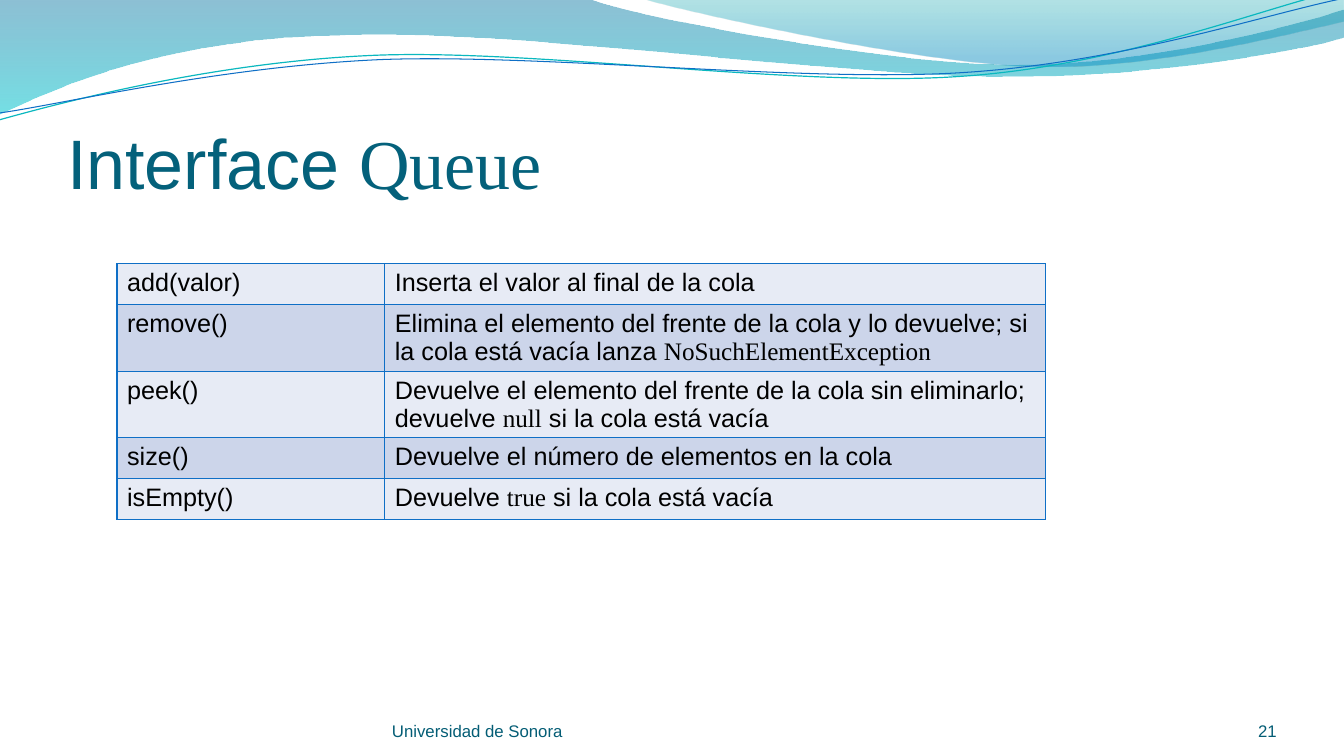
import math
from dataclasses import dataclass
from lxml import etree
from pptx import Presentation
from pptx.dml.color import RGBColor
from pptx.enum.text import MSO_ANCHOR, PP_ALIGN
from pptx.oxml.ns import qn
from pptx.util import Pt

BOTTOM, LEFT, RIGHT = MSO_ANCHOR.BOTTOM, PP_ALIGN.LEFT, PP_ALIGN.RIGHT
SANS, SERIF = "Arial", "Times New Roman"
BLACK, TITLE, FOOTER, BORDER = "000000", "04617B", "045D75", "0F6FC6"
BANDS = ("E7EBF5", "CCD5EA")
TILT, PIVOT = -2.7, (479, 42)


@dataclass
class Stop:
    position: float
    color: str
    alpha: int


@dataclass
class Wave:
    start: tuple
    segments: list
    stops: tuple = ()
    line: str = ""
    width: float = 0


@dataclass
class Label:
    box: tuple
    runs: list
    size: float
    color: str
    align: int = LEFT
    top_inset: float = 0


WAVES = [
    Wave((0, 0), [
        (422.6, -0.4),
        (456.5, 12.7, 637.2, 45.9, 727.9, 45.9),
        (819.4, 45.9, 920.2, 19.2, 959.8, 6.8),
        (961.2, 26.3),
        (943.9, 32.1, 835.2, 55.1, 715.7, 54.5),
        (596.9, 54.5, 366.5, 20.7, 247, 24.9),
        (123.8, 26.3, 43.9, 60.2, -0.7, 81.6),
    ], stops=(Stop(0, "0074A1", 45), Stop(1, "00C6CF", 55))),
    Wave((460.1, -0.4), [
        (488.9, 8.3, 654.5, 45, 738, 47.2),
        (821.5, 50, 923, 23.3, 959.8, 15.4),
        (959.8, 0),
    ], stops=(Stop(0, "00A1A9", 30), Stop(0.8, "008BBF", 45))),
    Wave((-0.7, 85.7), [
        (46.1, 72.7, 151.9, 44.6, 265.7, 39.6),
        (379.4, 34.6, 568.8, 62.6, 684, 54.7),
        (799.2, 47.5, 901.4, 5.8, 958.3, -7.2),
    ], line="0AB8BF", width=0.85),
    Wave((0, 80.6), [
        (45.4, 74.2, 157, 47.5, 272.2, 42.5),
        (386.6, 38.2, 573.1, 59, 687.6, 51.8),
        (802.8, 44.6, 903.6, 10.1, 960.5, -1.4),
    ], line="0F6FC6", width=0.75),
]

LABELS = [
    Label((48, 55.4, 864, 90), [("Interface ", SANS), ("Queue", SERIF)],
          50, TITLE, top_inset=3.6),
    Label((280, 500.4, 352, 28.8), [("Universidad de Sonora", SANS)], 12, FOOTER),
    Label((832, 500.4, 80, 28.8), [("21", SANS)], 12, FOOTER, RIGHT),
]

METHODS = [
    ("add(valor)", [("Inserta el valor al final de la cola", SANS)]),
    ("remove()", [
        ("Elimina el elemento del frente de la cola y lo devuelve; "
         "si la cola está vacía lanza ", SANS),
        ("NoSuchElementException", SERIF)]),
    ("peek()", [
        ("Devuelve el elemento del frente de la cola sin eliminarlo; devuelve ", SANS),
        ("null", SERIF), (" si la cola está vacía", SANS)]),
    ("size()", [("Devuelve el número de elementos en la cola", SANS)]),
    ("isEmpty()", [("Devuelve ", SANS), ("true", SERIF),
                   (" si la cola está vacía", SANS)]),
]


def rgb(value: str) -> RGBColor:
    return RGBColor.from_string(value)


def add_text(p, text: str, *, font: str, size: float, color: str) -> None:
    r = p.add_run()
    r.text = text
    r.font.name = font
    r.font.size = Pt(size)
    r.font.color.rgb = rgb(color)


def level(point: tuple) -> tuple:
    angle = math.radians(-TILT)
    dx, dy = point[0] - PIVOT[0], point[1] - PIVOT[1]
    return (PIVOT[0] + dx * math.cos(angle) - dy * math.sin(angle),
            PIVOT[1] + dx * math.sin(angle) + dy * math.cos(angle))


def bend(sp, segments: list) -> None:
    lines = iter(list(sp.element.iter(qn("a:lnTo"))))
    for seg in segments:
        first = next(lines)
        if len(seg) == 6:
            first.tag = qn("a:cubicBezTo")
            for other in (next(lines), next(lines)):
                first.append(other[0])
                other.getparent().remove(other)


def add_wave(s, wave: Wave) -> None:
    points = [wave.start]
    for seg in wave.segments:
        points += zip(seg[::2], seg[1::2])
    if wave.line:
        points = [level(point) for point in points]
    points = [(Pt(x), Pt(y)) for x, y in points]
    builder = s.shapes.build_freeform(*points[0])
    builder.add_line_segments(points[1:], close=bool(wave.stops))
    sp = builder.convert_to_shape()
    bend(sp, wave.segments)
    sp.shadow.inherit = False
    if wave.line:
        sp.rotation = TILT
        sp.fill.background()
        sp.line.color.rgb = rgb(wave.line)
        sp.line.width = Pt(wave.width)
        return
    sp.line.fill.background()
    sp.fill.gradient()
    sp.fill.gradient_angle = 270
    for gs, stop in zip(sp.fill.gradient_stops, wave.stops):
        gs.position = stop.position
        gs.color.rgb = rgb(stop.color)
    for clr, stop in zip(sp.element.spPr.iter(qn("a:srgbClr")), wave.stops):
        etree.SubElement(clr, qn("a:alpha"), val=str(stop.alpha * 1000))


def add_label(s, label: Label) -> None:
    sp = s.shapes.add_textbox(*map(Pt, label.box))
    tf = sp.text_frame
    tf.word_wrap = True
    tf.vertical_anchor = BOTTOM
    tf.margin_left = tf.margin_right = tf.margin_bottom = 0
    tf.margin_top = Pt(label.top_inset)
    p = tf.paragraphs[0]
    p.alignment = label.align
    for text, font in label.runs:
        add_text(p, text, font=font, size=label.size, color=label.color)


def add_borders(cell, color: str, width: float) -> None:
    tcPr = cell._tc.get_or_add_tcPr()
    for i, side in enumerate(("lnL", "lnR", "lnT", "lnB")):
        ln = etree.Element(qn(f"a:{side}"), w=str(Pt(width)))
        fill = etree.SubElement(ln, qn("a:solidFill"))
        etree.SubElement(fill, qn("a:srgbClr"), val=color)
        tcPr.insert(i, ln)


def add_methods(s) -> None:
    row_height = 29.2
    frame = s.shapes.add_table(len(METHODS), 2, Pt(83.6), Pt(188.4),
                               Pt(663.1), Pt(row_height * len(METHODS)))
    table = frame.table
    table.first_row = table.horz_banding = False
    for col, width in zip(table.columns, (191.3, 471.8)):
        col.width = Pt(width)
    for i, (method, description) in enumerate(METHODS):
        table.rows[i].height = Pt(row_height)
        for j, runs in enumerate(([(method, SANS)], description)):
            cell = table.cell(i, j)
            cell.fill.solid()
            cell.fill.fore_color.rgb = rgb(BANDS[i % 2])
            add_borders(cell, BORDER, 1)
            for text, font in runs:
                add_text(cell.text_frame.paragraphs[0], text,
                         font=font, size=18, color=BLACK)


def main() -> None:
    prs = Presentation()
    prs.slide_width, prs.slide_height = Pt(960), Pt(540)
    s = prs.slides.add_slide(prs.slide_layouts[6])
    for wave in WAVES:
        add_wave(s, wave)
    add_methods(s)
    for label in LABELS:
        add_label(s, label)
    prs.save("out.pptx")


if __name__ == "__main__":
    main()
